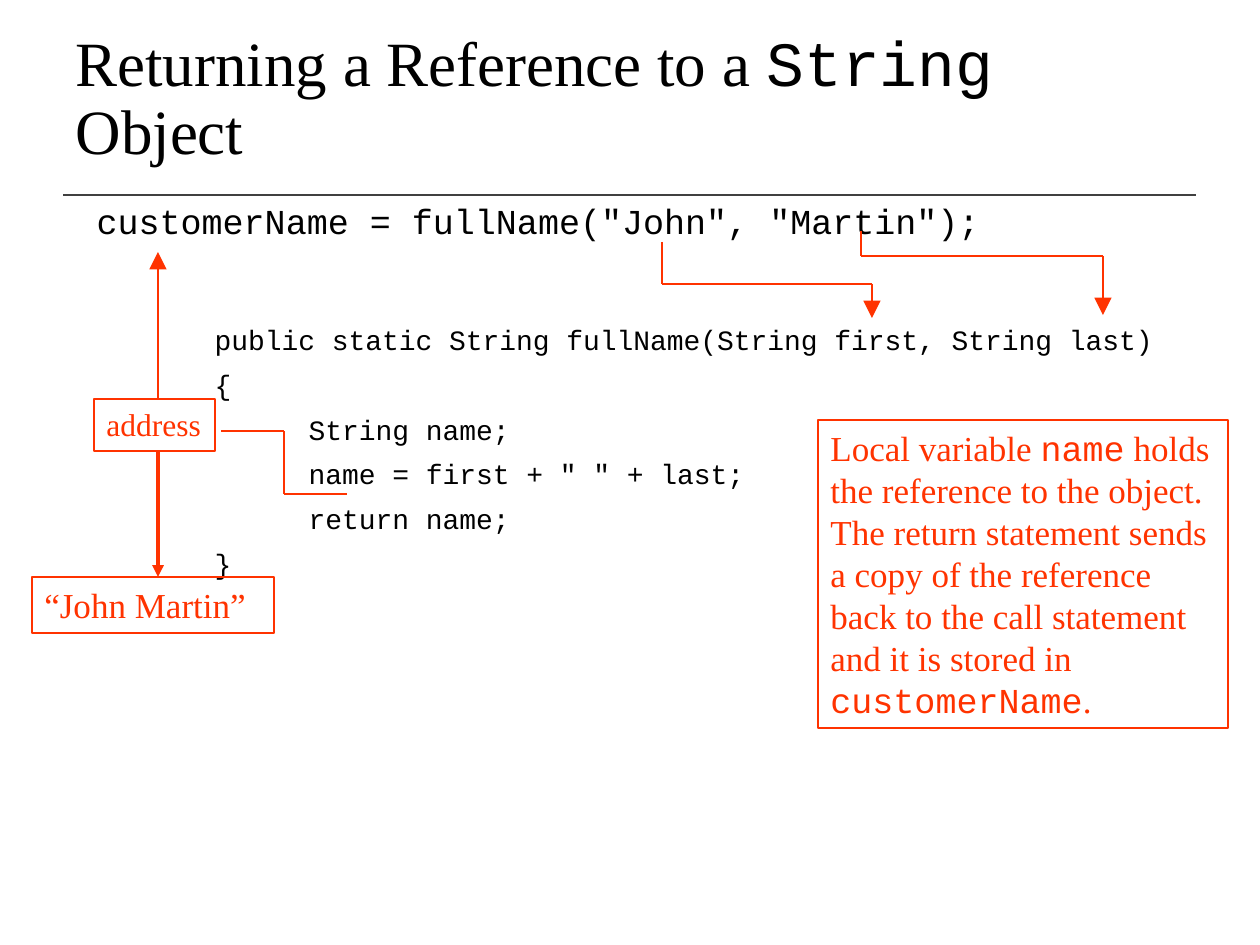
from dataclasses import dataclass
from itertools import pairwise

from lxml import etree
from pptx import Presentation
from pptx.dml.color import RGBColor
from pptx.enum.shapes import MSO_CONNECTOR, MSO_SHAPE
from pptx.enum.text import MSO_ANCHOR, MSO_AUTO_SIZE, PP_ALIGN
from pptx.oxml.ns import qn
from pptx.util import Emu, Pt

STRAIGHT = MSO_CONNECTOR.STRAIGHT
RECTANGLE = MSO_SHAPE.RECTANGLE
LEFT = PP_ALIGN.LEFT
MIDDLE, TOP = MSO_ANCHOR.MIDDLE, MSO_ANCHOR.TOP
NO_FIT = MSO_AUTO_SIZE.NONE

COLORS = {"text": "000000", "accent": "FF3300", "rule": "404040"}
SERIF, MONO = "Times New Roman", "Courier New"
PX_PER_INCH = 126


@dataclass(frozen=True)
class Span:
    text: str
    font: str = SERIF


@dataclass(frozen=True)
class CodeLine:
    text: str
    indent: int = 118
    size: int = 16
    before: float = 8.4


@dataclass(frozen=True)
class Label:
    frame: tuple[int, int, int, int]
    size: int
    spans: tuple[Span, ...]
    wrap: bool = True


@dataclass(frozen=True)
class Route:
    points: tuple[tuple[int, int], ...]
    width: float = 0.75
    head: str | None = None
    color: str = "accent"


TITLE = (Span("Returning a Reference to a "), Span("String", MONO), Span(" Object"))
CODE = (
    CodeLine('customerName = fullName("John", "Martin");', 0, 20, 7.5),
    CodeLine("public static String fullName(String first, String last)", before=48),
    CodeLine("{"),
    CodeLine("String name;", 212),
    CodeLine('name = first + " " + last;', 212),
    CodeLine("return name;", 212),
    CodeLine("}"),
)
LABELS = (
    Label((94, 399, 121, 52), 18, (Span("address"),), False),
    Label((32, 577, 242, 56), 20, (Span("“John Martin”"),)),
    Label((818, 420, 410, 308), 20, (
        Span("Local variable "),
        Span("name", MONO),
        Span(" holds the reference to the object. The return statement sends a copy "
             "of the reference back to the call statement and it is stored in "),
        Span("customerName", MONO),
        Span("."),
    )),
)
ROUTES = (
    Route(((63, 195), (1196, 195)), 1, color="rule"),
    Route(((158, 451), (158, 577)), 2.25, "med"),
    Route(((158, 399), (158, 252)), 1.5, "lg"),
    Route(((861, 231), (861, 256), (1103, 256), (1103, 315)), head="lg"),
    Route(((662, 242), (662, 284), (872, 284), (872, 318)), head="lg"),
    Route(((347, 494), (284, 494), (284, 431), (221, 431))),
)


def px(length: int) -> Emu:
    return Emu(round(length * 914400 / PX_PER_INCH))


def color(name: str) -> RGBColor:
    return RGBColor.from_string(COLORS[name])


def place(shape, frame: tuple[int, int, int, int]) -> None:
    shape.left, shape.top, shape.width, shape.height = map(px, frame)


def add_span(para, span: Span, size: int, ink: str) -> None:
    run = para.add_run()
    run.text = span.text
    run.font.name = span.font
    run.font.size = Pt(size)
    run.font.color.rgb = color(ink)


def fill_title(title) -> None:
    place(title, (63, 21, 1071, 158))
    box = title.text_frame
    box.auto_size = NO_FIT
    box.vertical_anchor = MIDDLE
    para = box.paragraphs[0]
    para.alignment = LEFT
    para.line_spacing = 0.9
    for span in TITLE:
        add_span(para, span, 36, "text")


def fill_code(body) -> None:
    place(body, (84, 198, 1134, 651))
    box = body.text_frame
    box.auto_size = NO_FIT
    box.vertical_anchor = TOP
    for index, line in enumerate(CODE):
        para = box.add_paragraph() if index else box.paragraphs[0]
        para.line_spacing = 0.9
        para.space_before = Pt(line.before)
        add_span(para, Span(line.text, MONO), line.size, "text")
        properties = para._p.get_or_add_pPr()
        properties.set("marL", str(px(line.indent)))
        properties.set("indent", "0")
        etree.SubElement(properties, qn("a:buNone"))


def add_label(page, label: Label) -> None:
    shape = page.shapes.add_shape(RECTANGLE, *map(px, label.frame))
    shape.shadow.inherit = False
    shape.fill.background()
    shape.line.color.rgb = color("accent")
    shape.line.width = Pt(0.75)
    box = shape.text_frame
    box.word_wrap = label.wrap
    box.vertical_anchor = TOP
    para = box.paragraphs[0]
    para.alignment = LEFT
    for span in label.spans:
        add_span(para, span, label.size, "accent")


def add_route(page, route: Route) -> None:
    for start, end in pairwise(route.points):
        line = page.shapes.add_connector(STRAIGHT, *map(px, start + end))
        line.line.color.rgb = color(route.color)
        line.line.width = Pt(route.width)
        etree.SubElement(line._element.spPr, qn("a:effectLst"))
        if route.head and end == route.points[-1]:
            etree.SubElement(line.line._get_or_add_ln(), qn("a:tailEnd"),
                             type="triangle", w=route.head, len=route.head)


def main() -> None:
    deck = Presentation()
    deck.slide_width, deck.slide_height = px(1260), px(945)
    page = deck.slides.add_slide(deck.slide_layouts[1])
    fill_title(page.shapes.title)
    fill_code(page.placeholders[1])
    for label in LABELS:
        add_label(page, label)
    for route in ROUTES:
        add_route(page, route)
    deck.save("out.pptx")


if __name__ == "__main__":
    main()
